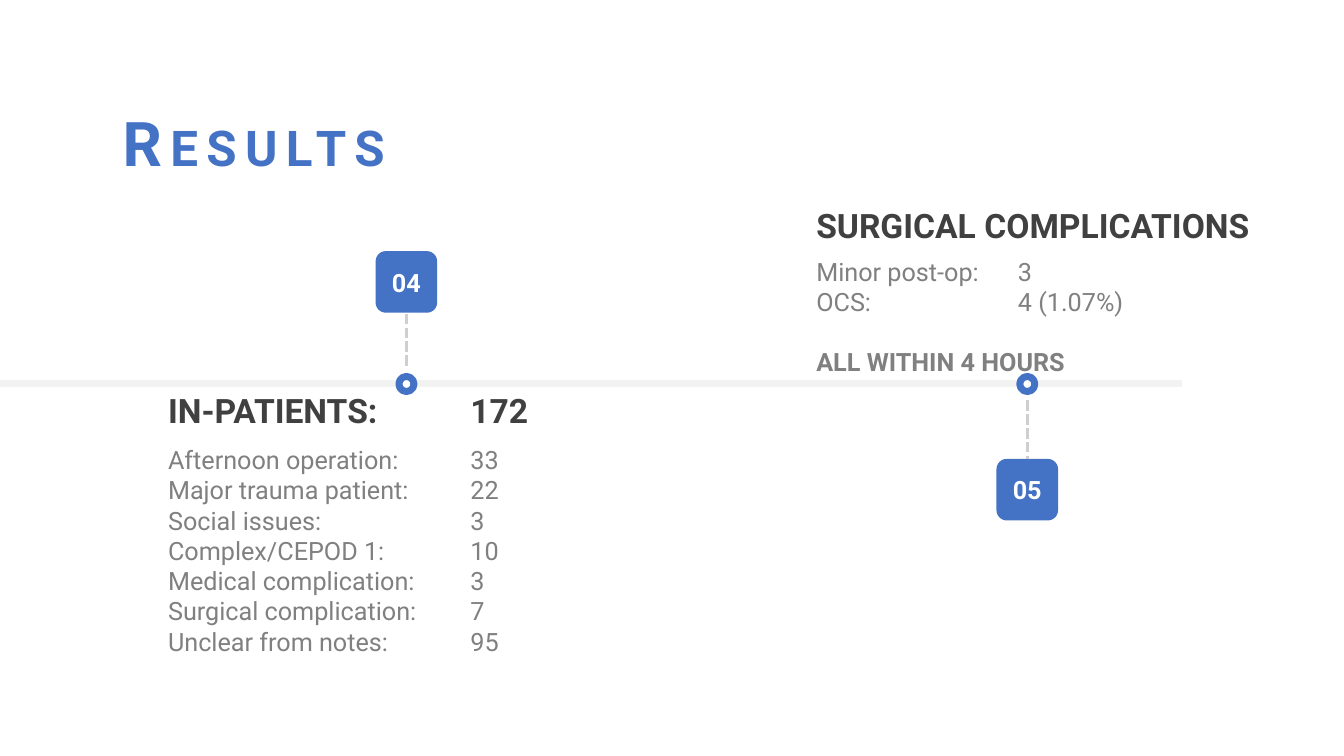
from dataclasses import dataclass

from lxml.etree import SubElement
from pptx import Presentation
from pptx.dml.color import RGBColor
from pptx.enum.dml import MSO_LINE
from pptx.enum.shapes import MSO_CONNECTOR, MSO_SHAPE
from pptx.enum.text import MSO_ANCHOR, MSO_AUTO_SIZE, PP_ALIGN
from pptx.oxml.ns import qn
from pptx.util import Pt


@dataclass(frozen=True)
class Theme:
    font: str = "Roboto"
    accent: str = "4472C4"
    heading: str = "404040"
    body: str = "808080"
    white: str = "FFFFFF"
    axis: str = "F2F2F2"
    stem: str = "D0CECE"
    title_size: int = 44
    heading_size: int = 24
    body_size: int = 18


def rgb(code):
    return RGBColor.from_string(code)


def write(paragraph, text, *, font, size, color, bold=False, align=None,
          before=0, tab=None, small_caps=False, spacing=None):
    paragraph.alignment = align
    if before:
        paragraph.space_before = Pt(before)
    if tab:
        stops = SubElement(paragraph._p.get_or_add_pPr(), qn("a:tabLst"))
        SubElement(stops, qn("a:tab"), pos=str(Pt(tab)), algn="l")
    run = paragraph.add_run()
    run.text = text
    run.font.name = font
    run.font.size = Pt(size)
    run.font.bold = bold
    run.font.color.rgb = rgb(color)
    properties = run._r.get_or_add_rPr()
    if small_caps:
        properties.set("cap", "small")
    if spacing:
        properties.set("spc", str(spacing * 100))


class TimelineSlide:
    def __init__(self, slide, theme):
        self.shapes = slide.shapes
        self.theme = theme

    def text(self, left, top, width, height, lines, **style):
        frame = self.shapes.add_textbox(
            Pt(left), Pt(top), Pt(width), Pt(height)).text_frame
        frame.word_wrap = True
        frame.auto_size = MSO_AUTO_SIZE.SHAPE_TO_FIT_TEXT
        for index, (line, extra) in enumerate(lines):
            paragraph = frame.add_paragraph() if index else frame.paragraphs[0]
            write(paragraph, line, font=self.theme.font, **{**style, **extra})

    def heading(self, left, top, width, line, **style):
        self.text(left, top, width, 36, [(line, style)], bold=True,
                  size=self.theme.heading_size, color=self.theme.heading)

    def details(self, left, top, width, height, rows, tab, closing=None):
        lines = [(f"{label}\t{value}", {"tab": tab}) for label, value in rows]
        if closing:
            lines.append((closing, {"bold": True, "before": 21.5}))
        self.text(left, top, width, height, lines,
                  size=self.theme.body_size, color=self.theme.body)

    def line(self, start, end, color, width, dash=None):
        connector = self.shapes.add_connector(
            MSO_CONNECTOR.STRAIGHT, *(Pt(value) for value in (*start, *end)))
        connector.line.color.rgb = rgb(color)
        connector.line.width = Pt(width)
        if dash:
            connector.line.dash_style = dash
        SubElement(connector._element.spPr, qn("a:effectLst"))
        return connector

    def shape(self, preset, center_x, center_y, size, fill):
        shape = self.shapes.add_shape(
            preset, Pt(center_x - size / 2), Pt(center_y - size / 2),
            Pt(size), Pt(size))
        shape.shadow.inherit = False
        shape.fill.solid()
        shape.fill.fore_color.rgb = rgb(fill)
        return shape

    def marker(self, x, y):
        marker = self.shape(MSO_SHAPE.OVAL, x, y, 10.8, self.theme.white)
        marker.line.color.rgb = rgb(self.theme.accent)
        marker.line.width = Pt(5)

    def badge(self, number, x, y):
        badge = self.shape(MSO_SHAPE.ROUNDED_RECTANGLE, x, y, 44,
                           self.theme.accent)
        badge.line.fill.background()
        frame = badge.text_frame
        frame.vertical_anchor = MSO_ANCHOR.MIDDLE
        write(frame.paragraphs[0], number, font=self.theme.font,
              size=self.theme.body_size, color=self.theme.white,
              bold=True, align=PP_ALIGN.CENTER)
        return badge

    def stem(self, x, y, badge, side):
        stem = self.line((x, y), (x, y), self.theme.stem, 2.5,
                         MSO_LINE.SQUARE_DOT)
        stem.end_connect(badge, side)


def main():
    presentation = Presentation()
    presentation.slide_width = Pt(960)
    presentation.slide_height = Pt(540)
    theme = Theme()
    results = TimelineSlide(
        presentation.slides.add_slide(presentation.slide_layouts[6]), theme)

    axis_y = 274.3
    milestones = [
        ("04", 290.3, 201.4, 261.4, 2),
        ("05", 733.8, 349.8, 285.8, 0),
    ]
    results.line((0, axis_y), (844, axis_y), theme.axis, 5)
    for number, x, badge_y, stem_y, side in milestones:
        results.marker(x, axis_y)
        badge = results.badge(number, x, badge_y)
        results.stem(x, stem_y, badge, side)

    results.heading(113, 275.2, 329, "IN-PATIENTS:\t172", tab=216)
    results.details(113, 314, 307, 160, [
        ("Afternoon operation:", "33"),
        ("Major trauma patient:", "22"),
        ("Social issues:", "3"),
        ("Complex/CEPOD 1:", "10"),
        ("Medical complication:", "3"),
        ("Surgical complication:", "7"),
        ("Unclear from notes:", "95"),
    ], tab=216)

    results.heading(576, 142.6, 333, "SURGICAL COMPLICATIONS")
    results.details(576, 179.3, 259, 94, [
        ("Minor post-op:", "3"),
        ("OCS:", "4 (1.07%)"),
    ], tab=144, closing="ALL WITHIN 4 HOURS")

    results.text(80.6, 71.3, 477, 60.5, [("Results", {})],
                 size=theme.title_size, color=theme.accent, bold=True,
                 small_caps=True, spacing=6)
    presentation.save("out.pptx")


if __name__ == "__main__":
    main()
